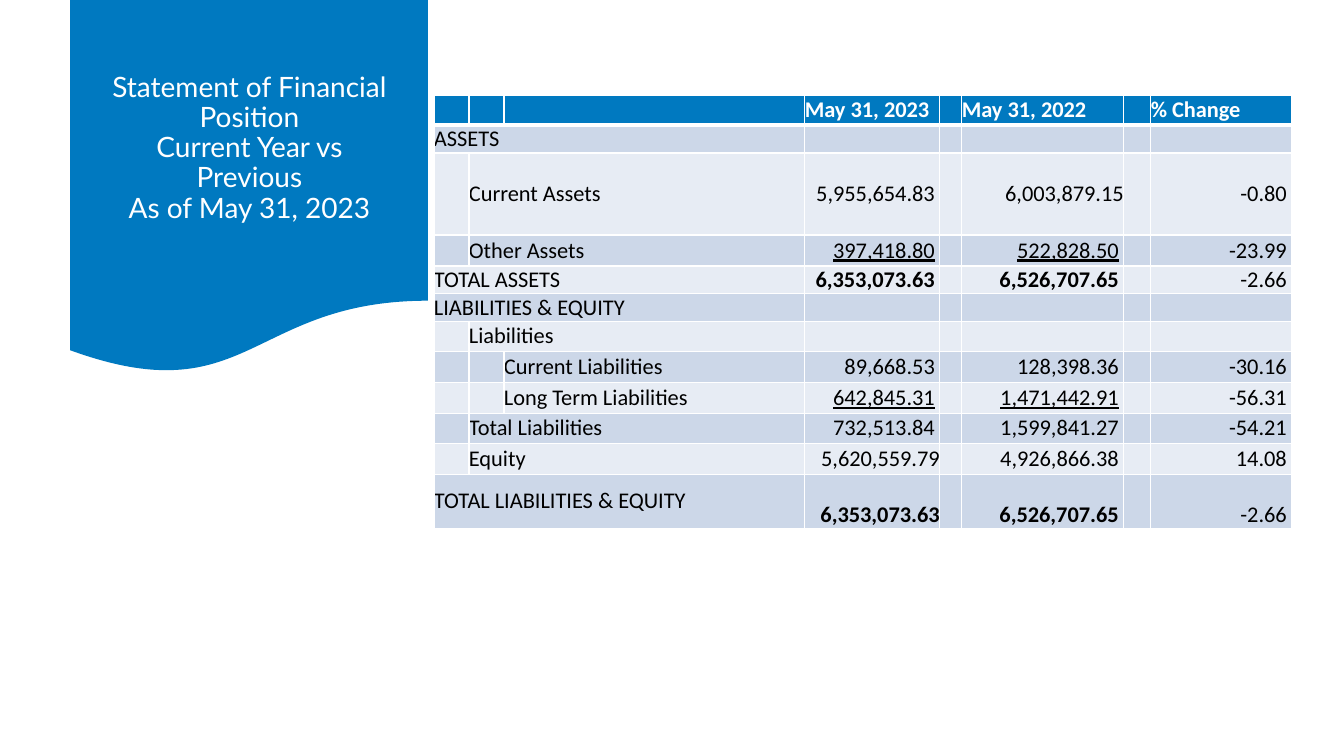
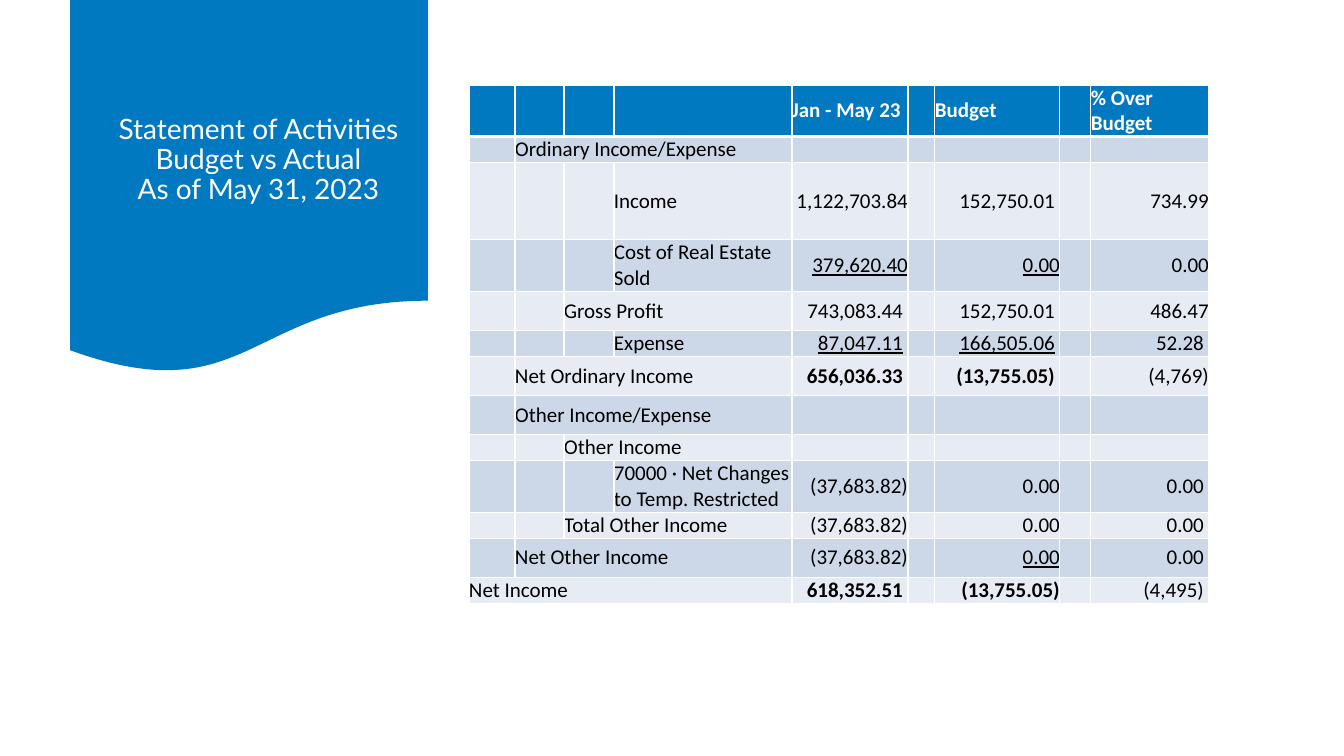
from lxml import etree
from pptx import Presentation
from pptx import util as u
from pptx.dml.color import RGBColor
from pptx.enum import shapes, text
from pptx.oxml.ns import qn

PX = 914400 / 100.8
BLUE, WHITE, BLACK = "0079C0", "FFFFFF", "000000"
BANDS = ["E7ECF4", "CCD7E8"]
TITLE_FONT, TABLE_FONT = "Lato", "Calibri"
NUMBER_INSET = 5


def px(length):
    return u.Emu(round(length * PX))


def rgb(value):
    return RGBColor.from_string(value)


# Values: "*" bold, "_" underlined, "~" inset from the right edge.
statements = [
    {
        "title": "Statement of Financial Position\vCurrent Year vs Previous\vAs of May 31, 2023",
        "title_at": (93, 18),
        "table_at": (434, 95),
        "size": 16,
        "columns": [35, 35, 301, 135, 22, 162, 27, 141],
        "bottom_row": 11,
        "rows": [
            (30, 0, "", ["May 31, 2023", "May 31, 2022", "% Change"]),
            (28, 0, "ASSETS", []),
            (82, 1, "Current Assets", ["5,955,654.83~", "6,003,879.15", "-0.80~"]),
            (31, 1, "Other Assets", ["_397,418.80~", "_522,828.50~", "-23.99~"]),
            (27, 0, "TOTAL ASSETS", ["*6,353,073.63~", "*6,526,707.65~", "-2.66~"]),
            (28, 0, "LIABILITIES & EQUITY", []),
            (30, 1, "Liabilities", []),
            (31, 2, "Current Liabilities", ["89,668.53~", "128,398.36~", "-30.16~"]),
            (31, 2, "Long Term Liabilities", ["_642,845.31~", "_1,471,442.91~", "-56.31~"]),
            (30, 1, "Total Liabilities", ["732,513.84~", "1,599,841.27~", "-54.21~"]),
            (31, 1, "Equity", ["5,620,559.79", "4,926,866.38~", "14.08~"]),
            (54, 0, "TOTAL LIABILITIES & EQUITY", ["*6,353,073.63", "*6,526,707.65~", "-2.66~"]),
        ],
    },
    {
        "title": "Statement of Activities\vBudget vs Actual\vAs of May 31, 2023",
        "title_at": (102, 30),
        "table_at": (469, 85),
        "size": 15,
        "columns": [46, 49, 50, 178, 116, 27, 125, 31, 118],
        "bottom_row": None,
        "rows": [
            (51, 0, "", ["Jan - May 23", "Budget", "% Over Budget"]),
            (26, 1, "Ordinary Income/Expense", []),
            (77, 3, "Income", ["1,122,703.84", "152,750.01~", "734.99"]),
            (52, 3, "Cost of Real Estate Sold", ["_379,620.40", "_0.00", "0.00"]),
            (39, 2, "Gross Profit", ["743,083.44~", "152,750.01~", "486.47"]),
            (26, 3, "Expense", ["_87,047.11~", "_166,505.06~", "52.28~"]),
            (39, 1, "Net Ordinary Income", ["*656,036.33~", "*(13,755.05)~", "(4,769)"]),
            (39, 1, "Other Income/Expense", []),
            (26, 2, "Other Income", []),
            (52, 3, "70000 · Net Changes to Temp. Restricted", ["(37,683.82)", "0.00", "0.00~"]),
            (26, 2, "Total Other Income", ["(37,683.82)", "0.00", "0.00~"]),
            (39, 1, "Net Other Income", ["(37,683.82)", "_0.00", "0.00~"]),
            (26, 0, "Net Income", ["*618,352.51~", "*(13,755.05)", "(4,495)~"]),
        ],
    },
]

prs = Presentation()
prs.slide_width, prs.slide_height = px(1344), px(756)
title_only = prs.slide_layouts[5]

for statement in statements:
    slide = prs.slides.add_slide(title_only)

    banner = slide.shapes.add_shape(
        shapes.MSO_SHAPE.FLOWCHART_DOCUMENT, px(70), 0, px(358), px(375))
    banner.shadow.inherit = False
    banner.fill.solid()
    banner.fill.fore_color.rgb = rgb(BLUE)
    banner.line.fill.background()
    slide.shapes._spTree.insert(2, banner._element)

    title = slide.shapes.title
    left, top = statement["title_at"]
    title.left, title.top, title.width, title.height = px(left), px(top), px(313), px(261)
    heading = title.text_frame
    heading.text = statement["title"]
    heading.word_wrap = True
    heading.auto_size = text.MSO_AUTO_SIZE.NONE
    heading.vertical_anchor = text.MSO_ANCHOR.MIDDLE
    heading.margin_left = heading.margin_right = px(12)
    heading.paragraphs[0].alignment = text.PP_ALIGN.CENTER
    heading.paragraphs[0].line_spacing = 0.9
    for run in heading.paragraphs[0].runs:
        run.font.size = u.Pt(20)
        run.font.name = TITLE_FONT
        run.font.color.rgb = rgb(WHITE)

    rows, columns = statement["rows"], statement["columns"]
    left, top = statement["table_at"]
    table = slide.shapes.add_table(
        len(rows), len(columns), px(left), px(top),
        px(sum(columns)), px(sum(row[0] for row in rows))).table
    table.horz_banding = False
    for column, width in zip(table.columns, columns):
        column.width = px(width)
    first_value = len(columns) - 5

    for r, (height, indent, label, values) in enumerate(rows):
        header = r == 0
        table.rows[r].height = px(height)
        entries = {indent: label} if label else {}
        entries.update({first_value + 2 * i: value for i, value in enumerate(values)})
        for c in range(len(columns)):
            entry = entries.get(c, "")
            is_value = c >= first_value
            cell = table.cell(r, c)
            cell.margin_left = cell.margin_right = cell.margin_top = cell.margin_bottom = 0
            if entry.endswith("~"):
                cell.margin_right = px(NUMBER_INSET)
            low = is_value and r == statement["bottom_row"]
            cell.vertical_anchor = text.MSO_ANCHOR.BOTTOM if low else text.MSO_ANCHOR.MIDDLE
            for side in "LRTB":
                weight = 3 if header and side == "B" else 1
                edge = etree.SubElement(
                    cell._tc.get_or_add_tcPr(), qn("a:ln" + side), w=str(u.Pt(weight)))
                paint = etree.SubElement(edge, qn("a:solidFill"))
                etree.SubElement(paint, qn("a:srgbClr"), val=WHITE)
            cell.fill.solid()
            cell.fill.fore_color.rgb = rgb(BLUE if header else BANDS[r % 2])

            line = cell.text_frame.paragraphs[0]
            if not entry:
                etree.SubElement(
                    line._p, qn("a:endParaRPr"), sz=str(statement["size"] * 100))
                continue
            line.text = entry.strip("*_~")
            if is_value and not header:
                line.alignment = text.PP_ALIGN.RIGHT
            font = line.runs[0].font
            font.name = TABLE_FONT
            font.size = u.Pt(statement["size"])
            font.bold = header or entry.startswith("*")
            font.underline = entry.startswith("_")
            font.color.rgb = rgb(WHITE if header else BLACK)
        if label and indent < first_value - 1:
            table.cell(r, indent).merge(table.cell(r, first_value - 1))

prs.save("out.pptx")
